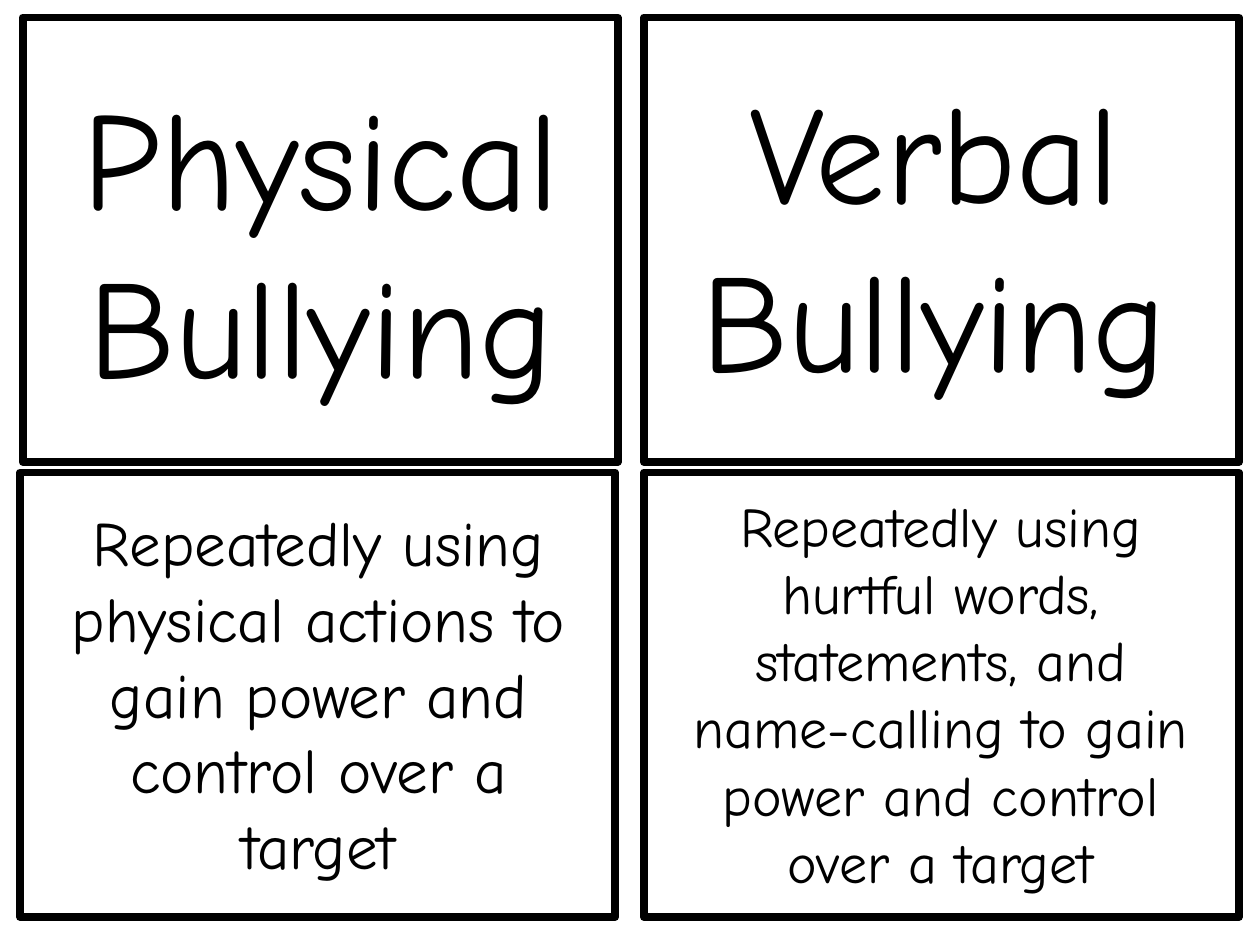
from pptx import Presentation
from pptx import util as u
from pptx.dml.color import RGBColor
from pptx.enum import shapes, text

BLACK = RGBColor(0x00, 0x00, 0x00)
WHITE = RGBColor(0xFF, 0xFF, 0xFF)
FONT = "Comic Neue"
CARD_WIDTH, CARD_HEIGHT = 340, 254

presentation = Presentation()
presentation.slide_width = u.Pt(720)
presentation.slide_height = u.Pt(540)
slide = presentation.slides.add_slide(presentation.slide_layouts[6])


def add_text(words, left, top, width, height, size):
    shape = slide.shapes.add_textbox(u.Pt(left), u.Pt(top), u.Pt(width), u.Pt(height))
    frame = shape.text_frame
    frame.word_wrap = True
    frame.auto_size = text.MSO_AUTO_SIZE.SHAPE_TO_FIT_TEXT
    paragraph = frame.paragraphs[0]
    paragraph.alignment = text.PP_ALIGN.CENTER
    run = paragraph.add_run()
    run.text = words
    run.font.name = FONT
    run.font.size = u.Pt(size)
    run.font.color.rgb = BLACK


# Card frames: terms above, definitions below
for left, top in [(13, 10), (11.5, 270), (368, 10), (368, 270)]:
    card = slide.shapes.add_shape(
        shapes.MSO_SHAPE.RECTANGLE,
        u.Pt(left), u.Pt(top), u.Pt(CARD_WIDTH), u.Pt(CARD_HEIGHT))
    card.shadow.inherit = False
    card.fill.solid()
    card.fill.fore_color.rgb = WHITE
    card.line.color.rgb = BLACK
    card.line.width = u.Pt(4.5)

# Terms
add_text("Physical Bullying", left=21.6, top=36.7, width=324, height=201, size=80)
add_text("Verbal Bullying", left=378, top=33.1, width=312, height=201, size=80)

# Definitions
add_text("Repeatedly using hurtful words, statements, and name-calling "
         "to gain power and control over a target",
         left=381.6, top=277.2, width=312, height=240, size=32)
add_text("Repeatedly using physical actions to gain power and control over a target",
         left=23, top=284.4, width=318, height=225.4, size=36)

presentation.save("out.pptx")
